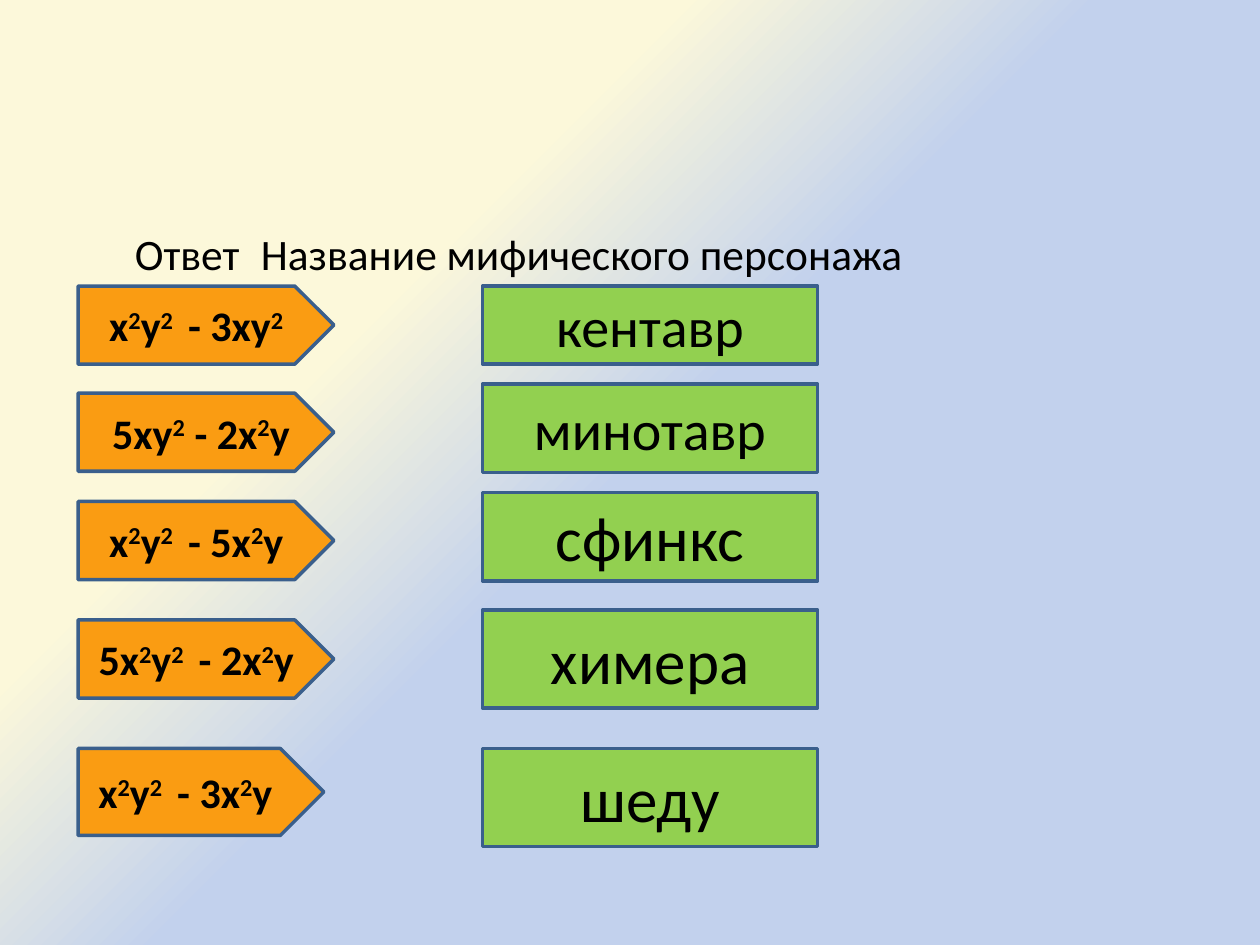
from lxml import etree
from pptx import Presentation
from pptx import util as u
from pptx.dml.color import RGBColor
from pptx.enum import shapes, text
from pptx.oxml.ns import qn

ROWS = [
    ("х^2^у^2 ^ - 3ху^2^", 22.7, 20.3, 6.2, "кентавр", 22.7, 6.2, 32),
    (" 5ху^2^ - 2х^2^у", 31.2, 20.3, 6.2, "минотавр", 30.5, 7, 32),
    ("х^2^у^2 ^ - 5х^2^у", 39.8, 20.3, 6.2, "сфинкс", 39.1, 7, 36),
    ("5х^2^у^2 ^ - 2х^2^у", 49.2, 20.3, 6.2, "химера", 48.4, 7.8, 36),
    ("х^2^у^2 ^ - 3х^2^у ", 59.4, 19.5, 6.9, "шеду", 59.4, 7.8, 36),
]


def hue(code):
    return RGBColor.from_string(code)


def write(para, words, size=24, bold=False, ink="000000", face="Calibri"):
    for i, part in enumerate(words.split("^")):
        if part:
            run = para.add_run()
            run.text = part
            font = run.font
            font.size, font.bold, font.name = u.Pt(size), bold, face
            font.color.rgb = hue(ink)
            if i % 2:
                run._r.get_or_add_rPr().set("baseline", "30000")


class Deck:
    """Slide on a grid of 100 columns by 75 rows, with its style."""

    cream, blue = "FCF8DA", "C2D1ED"
    gold, green, edge = "FA9C12", "92D050", "3A5F8C"

    def __init__(self):
        self.prs = Presentation()
        self.prs.slide_width, self.prs.slide_height = u.Inches(10), u.Inches(7.5)
        self.slide = self.prs.slides.add_slide(self.prs.slide_layouts[1])
        title = self.slide.shapes.title._element
        title.getparent().remove(title)

    def grid(self, x, y, w, h):
        col, row = self.prs.slide_width / 100, self.prs.slide_height / 75
        return [round(n) for n in (x * col, y * row, w * col, h * row)]

    def ground(self):
        fill = self.slide.background.fill
        fill.gradient()
        fill.gradient_angle = 315
        for stop, code, at in zip(fill.gradient_stops, (self.cream, self.blue), (0.31, 0.5)):
            stop.color.rgb, stop.position = hue(code), at

    def heads(self, left, right, *box):
        body = self.slide.placeholders[1]
        body.left, body.top, body.width, body.height = self.grid(*box)
        frame = body.text_frame
        frame.margin_left = u.Inches(0.57)
        para = frame.paragraphs[0]
        write(para, f"{left}\t{right}", size=24.8)
        props = para._p.get_or_add_pPr()
        props.set("marL", "0")
        props.set("indent", "0")
        etree.SubElement(props, qn("a:buNone"))
        tabs = etree.SubElement(props, qn("a:tabLst"))
        etree.SubElement(tabs, qn("a:tab"), pos=str(u.Inches(2.08)), algn="l")

    def block(self, kind, words, fill, *box, **style):
        shape = self.slide.shapes.add_shape(kind, *self.grid(*box))
        shape.shadow.inherit = False
        shape.fill.solid()
        shape.fill.fore_color.rgb = hue(fill)
        shape.line.color.rgb = hue(self.edge)
        shape.line.width = u.Pt(2)
        frame = shape.text_frame
        frame.word_wrap = True
        frame.vertical_anchor = text.MSO_ANCHOR.MIDDLE
        para = frame.paragraphs[0]
        para.alignment = text.PP_ALIGN.CENTER
        write(para, words, **style)


def main():
    deck = Deck()
    deck.ground()
    deck.heads("Ответ", "Название мифического персонажа", 5, 17.5, 90, 49.5)
    kinds = shapes.MSO_SHAPE
    for term, y, w, h, name, top, tall, size in ROWS:
        deck.block(kinds.PENTAGON, term, deck.gold, 6.2, y, w, h, bold=True)
        deck.block(kinds.RECTANGLE, name, deck.green, 38.3, top, 26.6, tall, size=size)
    deck.prs.save("out.pptx")


if __name__ == "__main__":
    main()
